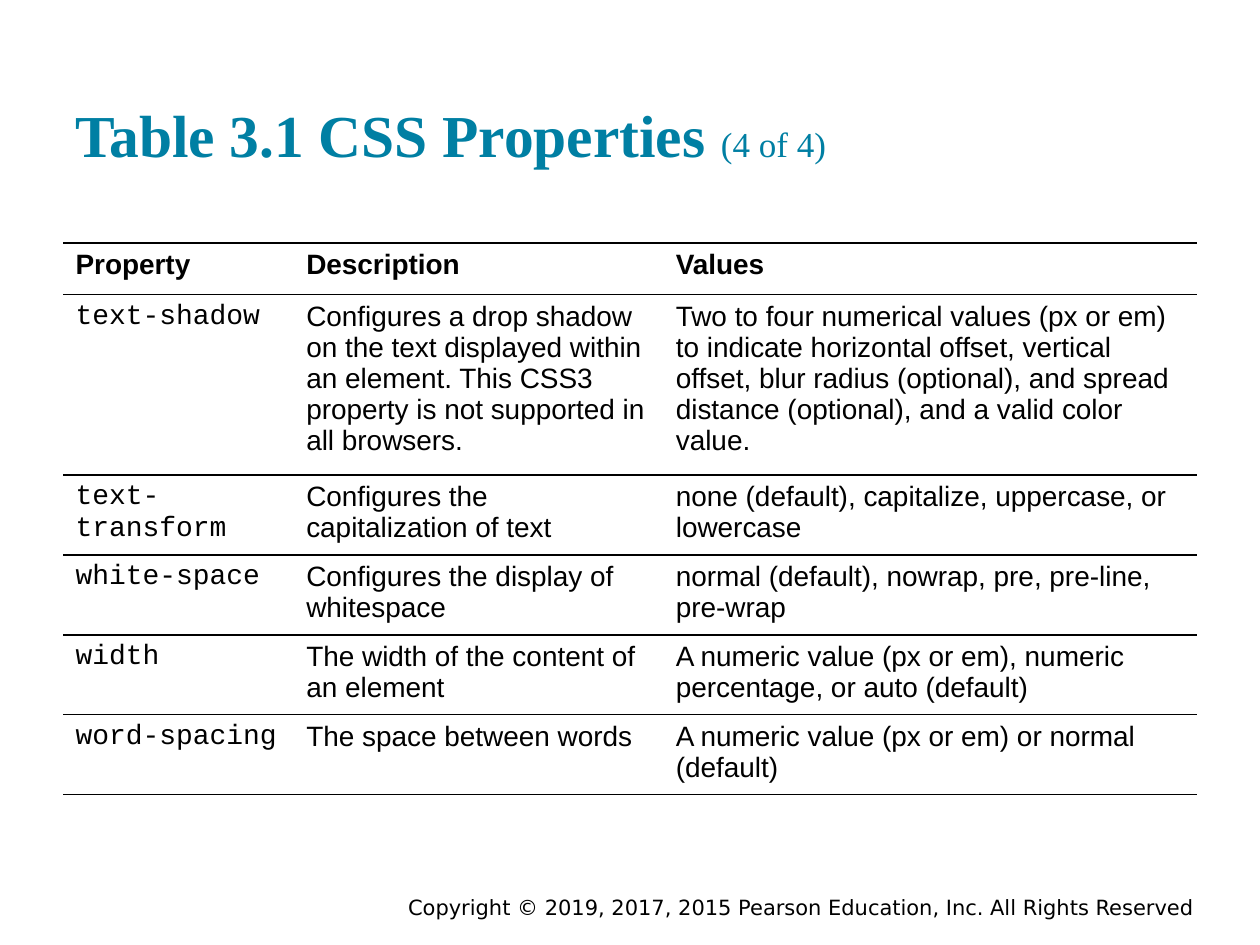
from dataclasses import dataclass

from lxml.etree import SubElement
from pptx import Presentation
from pptx.dml.color import RGBColor
from pptx.enum.text import MSO_ANCHOR, PP_ALIGN
from pptx.oxml.ns import qn
from pptx.util import Cm, Pt


@dataclass(frozen=True)
class Theme:
    teal: str = "007FA3"
    black: str = "000000"
    white: str = "FFFFFF"
    heading_font: str = "Times New Roman"
    body_font: str = "Arial"
    code_font: str = "Courier New"
    footer_font: str = "DejaVu Sans"
    title_size: int = 34
    part_size: int = 20
    table_size: int = 16
    footer_size: int = 12
    rule_width: int = 1


THEME = Theme()
COLUMN_WIDTHS = (4.65, 7.45, 10.76)
ROW_HEIGHT = 1.04
PROPERTIES = [
    ("Property", "Description", "Values"),
    ("text-shadow",
     "Configures a drop shadow on the text displayed within an element. "
     "This CSS3 property is not supported in all browsers.",
     "Two to four numerical values (px or em) to indicate horizontal offset, "
     "vertical offset, blur radius (optional), and spread distance (optional), "
     "and a valid color value."),
    ("text-transform", "Configures the capitalization of text",
     "none (default), capitalize, uppercase, or lowercase"),
    ("white-space", "Configures the display of whitespace",
     "normal (default), nowrap, pre, pre-line, pre-wrap"),
    ("width", "The width of the content of an element",
     "A numeric value (px or em), numeric percentage, or auto (default)"),
    ("word-spacing", "The space between words",
     "A numeric value (px or em) or normal (default)"),
]


def add_text(para, text, *, font, size, color=THEME.black, bold=False):
    span = para.add_run()
    span.text = text
    span.font.name = font
    span.font.size = Pt(size)
    span.font.bold = bold
    span.font.color.rgb = RGBColor.from_string(color)


def add_text_box(page, left, top, width, height, anchor):
    frame = page.shapes.add_textbox(Cm(left), Cm(top), Cm(width), Cm(height)).text_frame
    frame.word_wrap = True
    frame.vertical_anchor = anchor
    return frame


def add_title(page, left, top, width, height):
    frame = add_text_box(page, left, top, width, height, MSO_ANCHOR.BOTTOM)
    frame.margin_top = frame.margin_bottom = Cm(0.25)
    para = frame.paragraphs[0]
    style = {"font": THEME.heading_font, "color": THEME.teal}
    add_text(para, "Table 3.1 CSS Properties ", size=THEME.title_size, bold=True, **style)
    add_text(para, "(4 of 4)", size=THEME.part_size, **style)


def rule_cell(cell):
    """Fill the cell and draw lines above and below it only."""
    cell.fill.solid()
    cell.fill.fore_color.rgb = RGBColor.from_string(THEME.white)
    properties = cell._tc.get_or_add_tcPr()
    for position, side in enumerate(("lnL", "lnR", "lnT", "lnB")):
        line = SubElement(properties, qn(f"a:{side}"), w=str(Pt(THEME.rule_width)))
        if side in ("lnT", "lnB"):
            fill = SubElement(line, qn("a:solidFill"))
            SubElement(fill, qn("a:srgbClr"), val=THEME.black)
        else:
            SubElement(line, qn("a:noFill"))
        properties.insert(position, line)


def add_property_table(page, left, top):
    table = page.shapes.add_table(
        len(PROPERTIES), len(COLUMN_WIDTHS), Cm(left), Cm(top),
        Cm(sum(COLUMN_WIDTHS)), Cm(ROW_HEIGHT * len(PROPERTIES))).table
    table.horz_banding = False
    for column, width in zip(table.columns, COLUMN_WIDTHS):
        column.width = Cm(width)
    for row_index, texts in enumerate(PROPERTIES):
        table.rows[row_index].height = Cm(ROW_HEIGHT)
        is_header = row_index == 0
        for column_index, text in enumerate(texts):
            cell = table.cell(row_index, column_index)
            is_code = column_index == 0 and not is_header
            add_text(cell.text_frame.paragraphs[0], text,
                     font=THEME.code_font if is_code else THEME.body_font,
                     size=THEME.table_size, bold=is_header)
            rule_cell(cell)


def add_footer(page, left, top, width, height):
    frame = add_text_box(page, left, top, width, height, MSO_ANCHOR.MIDDLE)
    para = frame.paragraphs[0]
    para.alignment = PP_ALIGN.RIGHT
    add_text(para, "Copyright © 2019, 2017, 2015 Pearson Education, Inc. All Rights Reserved",
             font=THEME.footer_font, size=THEME.footer_size)


def main():
    deck = Presentation()
    deck.slide_width, deck.slide_height = Cm(25.4), Cm(19.05)
    page = deck.slides.add_slide(deck.slide_layouts[6])
    add_footer(page, 7.54, 17.96, 16.79, 0.64)
    add_title(page, 1.27, 0.61, 22.86, 3.05)
    add_property_table(page, 1.27, 4.9)
    deck.save("out.pptx")


if __name__ == "__main__":
    main()
